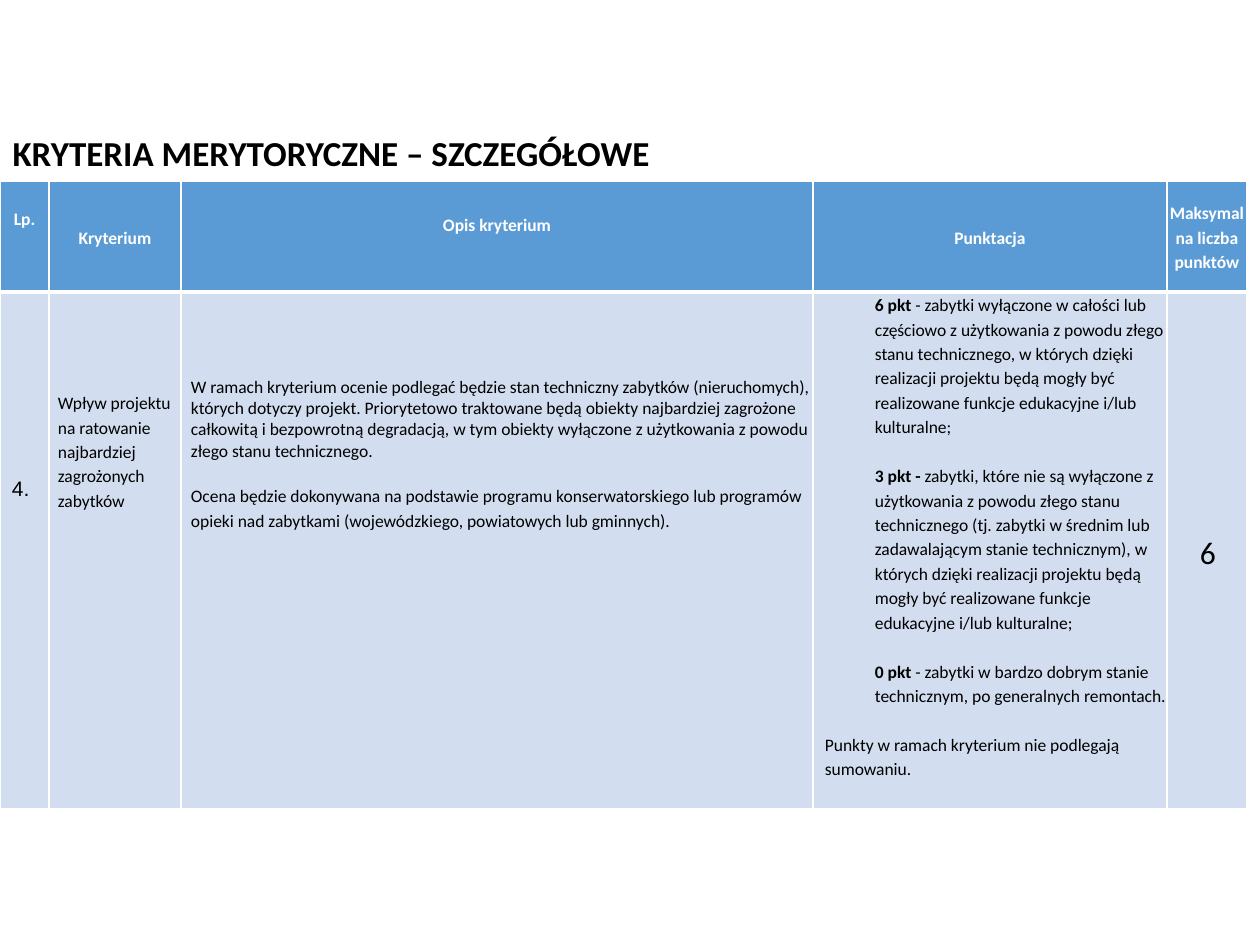
from lxml.etree import SubElement
from pptx import Presentation
from pptx.dml.color import RGBColor
from pptx.enum.text import MSO_ANCHOR, MSO_AUTO_SIZE, PP_ALIGN
from pptx.oxml import parse_xml
from pptx.oxml.ns import nsdecls, qn
from pptx.util import Pt

PX = 914400 / 126
WHITE, BLACK, HEADER_BLUE, BODY_BLUE = "FFFFFF", "000000", "5B9BD5", "D2DEEF"
COLUMNS = (49, 132, 632, 354, 80)
ROWS = (111, 517)
LOOSE = 1.15
BLANK_LINE = Pt(14)


def px(length):
    """Turn whole pixels into EMU."""
    return round(length * PX)


def rgb(value):
    """Turn a hex string into a colour."""
    return RGBColor.from_string(value)


def apply_format(target, values):
    """Set every attribute named in a dict of format values."""
    for name, value in values.items():
        setattr(target, name, value)


def margins(left, top, right, bottom):
    """Name four pixel insets as cell or frame attributes."""
    sides = ("left", "top", "right", "bottom")
    return {f"margin_{side}": px(inset) for side, inset in zip(sides, (left, top, right, bottom))}


def add_run(paragraph, text, size, bold=False, color=BLACK, font="Calibri"):
    """Append one formatted run."""
    run = paragraph.add_run()
    run.text = text
    apply_format(run.font, {"size": Pt(size), "bold": bold, "name": font})
    run.font.color.rgb = rgb(color)


def set_border(cell, side, points):
    """Draw one white edge of a cell."""
    properties = cell._tc.get_or_add_tcPr()
    line = SubElement(properties, qn(f"a:ln{side}"), w=str(Pt(points)))
    line.append(parse_xml(f'<a:solidFill {nsdecls("a")}><a:srgbClr val="{WHITE}"/></a:solidFill>'))


def style_cell(cell, fill, insets, anchor, top_line, bottom_line):
    """Give a cell its borders, fill, insets and anchor."""
    for side, points in (("L", 1), ("R", 1), ("T", top_line), ("B", bottom_line)):
        set_border(cell, side, points)
    cell.fill.solid()
    cell.fill.fore_color.rgb = rgb(fill)
    apply_format(cell, {**margins(*insets), "vertical_anchor": anchor})


def add_paragraph(frame, runs, indent=0, **values):
    """Write runs into the first free paragraph of a frame."""
    first = frame.paragraphs[0]
    paragraph = frame.add_paragraph() if first.runs else first
    paragraph._p.get_or_add_pPr().set("marL", str(px(indent)))
    apply_format(paragraph, values)
    for run in runs:
        add_run(paragraph, *run)


def fill_title(title):
    """Place and write the slide title."""
    box = {"left": 0, "top": 125, "width": 683, "height": 55}
    apply_format(title, {name: px(length) for name, length in box.items()})
    frame = title.text_frame
    apply_format(frame, {
        "word_wrap": False,
        "auto_size": MSO_AUTO_SIZE.SHAPE_TO_FIT_TEXT,
        "vertical_anchor": MSO_ANCHOR.MIDDLE,
    })
    add_paragraph(frame, [("KRYTERIA MERYTORYCZNE – SZCZEGÓŁOWE", 20, True)],
                  alignment=PP_ALIGN.LEFT)


def fill_header(cells):
    """Write the heading row."""
    headings = (
        ("Lp.", (9, 25, 9, 0), MSO_ANCHOR.TOP),
        ("Kryterium", (9, 0, 9, 0), MSO_ANCHOR.MIDDLE),
        ("Opis kryterium", (9, 0, 9, 25), MSO_ANCHOR.MIDDLE),
        ("Punktacja", (0, 0, 0, 0), MSO_ANCHOR.MIDDLE),
        ("Maksymalna liczba punktów", (0, 0, 0, 0), MSO_ANCHOR.MIDDLE),
    )
    for cell, (heading, insets, anchor) in zip(cells, headings):
        style_cell(cell, HEADER_BLUE, insets, anchor, 1, 3)
        add_paragraph(cell.text_frame, [(heading, 10, True, WHITE)],
                      alignment=PP_ALIGN.CENTER, line_spacing=LOOSE)


def fill_scoring(frame):
    """Write the point levels and the closing rule."""
    levels = (
        ("6 pkt ", "- zabytki wyłączone w całości lub częściowo z użytkowania z powodu złego stanu "
         "technicznego, w których dzięki realizacji projektu będą mogły być realizowane funkcje "
         "edukacyjne i/lub kulturalne;"),
        ("3 pkt - ", "zabytki, które nie są wyłączone z użytkowania z powodu złego stanu "
         "technicznego (tj. zabytki w średnim lub zadawalającym stanie technicznym), w których "
         "dzięki realizacji projektu będą mogły być realizowane funkcje edukacyjne i/lub "
         "kulturalne;"),
        ("0 pkt ", "- zabytki w bardzo dobrym stanie technicznym, po generalnych remontach."),
    )
    for points, meaning in levels:
        add_paragraph(frame, [(points, 10, True), (meaning, 10)], 62,
                      line_spacing=LOOSE, space_after=BLANK_LINE)
    add_paragraph(frame, [("Punkty w ramach kryterium nie podlegają sumowaniu.", 10)], 12,
                  line_spacing=LOOSE)


def fill_criterion(cells):
    """Write the row of the fourth criterion."""
    layouts = (
        ((12, 185, 12, 6), MSO_ANCHOR.TOP),
        ((9, 98, 9, 0), MSO_ANCHOR.TOP),
        ((0, 85, 0, 0), MSO_ANCHOR.TOP),
        ((0, 0, 0, 0), MSO_ANCHOR.TOP),
        ((0, 0, 0, 0), MSO_ANCHOR.MIDDLE),
    )
    for cell, (insets, anchor) in zip(cells, layouts):
        style_cell(cell, BODY_BLUE, insets, anchor, 3, 1)
    number, criterion, description, scoring, maximum = (cell.text_frame for cell in cells)
    add_paragraph(number, [("4.", 12, False, BLACK, "Arial")])
    add_paragraph(criterion, [("Wpływ projektu na ratowanie najbardziej zagrożonych zabytków", 10)],
                  line_spacing=LOOSE)
    add_paragraph(description, [(
        "W ramach kryterium ocenie podlegać będzie stan techniczny zabytków (nieruchomych), "
        "których dotyczy projekt. Priorytetowo traktowane będą obiekty najbardziej zagrożone "
        "całkowitą i bezpowrotną degradacją, w tym obiekty wyłączone z użytkowania z powodu "
        "złego stanu technicznego.", 10)], 10, space_after=Pt(12))
    add_paragraph(description, [(
        "Ocena będzie dokonywana na podstawie programu konserwatorskiego lub programów opieki "
        "nad zabytkami (wojewódzkiego, powiatowych lub gminnych).", 10)], 10, line_spacing=LOOSE)
    fill_scoring(scoring)
    add_paragraph(maximum, [("6", 18)], 2, alignment=PP_ALIGN.CENTER, line_spacing=LOOSE)


def add_criteria_table(slide):
    """Add the criteria table with its two rows."""
    frame = slide.shapes.add_table(len(ROWS), len(COLUMNS), 0, px(181),
                                   px(sum(COLUMNS)), px(sum(ROWS)))
    table = frame.table
    table.horz_banding = False
    for column, width in zip(table.columns, COLUMNS):
        column.width = px(width)
    for row, height in zip(table.rows, ROWS):
        row.height = px(height)
    header, criterion = (list(row.cells) for row in table.rows)
    fill_header(header)
    fill_criterion(criterion)


def main():
    """Build and save the slide."""
    presentation = Presentation()
    apply_format(presentation, {"slide_width": px(1260), "slide_height": px(945)})
    slide = presentation.slides.add_slide(presentation.slide_layouts[5])
    fill_title(slide.shapes.title)
    add_criteria_table(slide)
    presentation.save("out.pptx")


if __name__ == "__main__":
    main()
